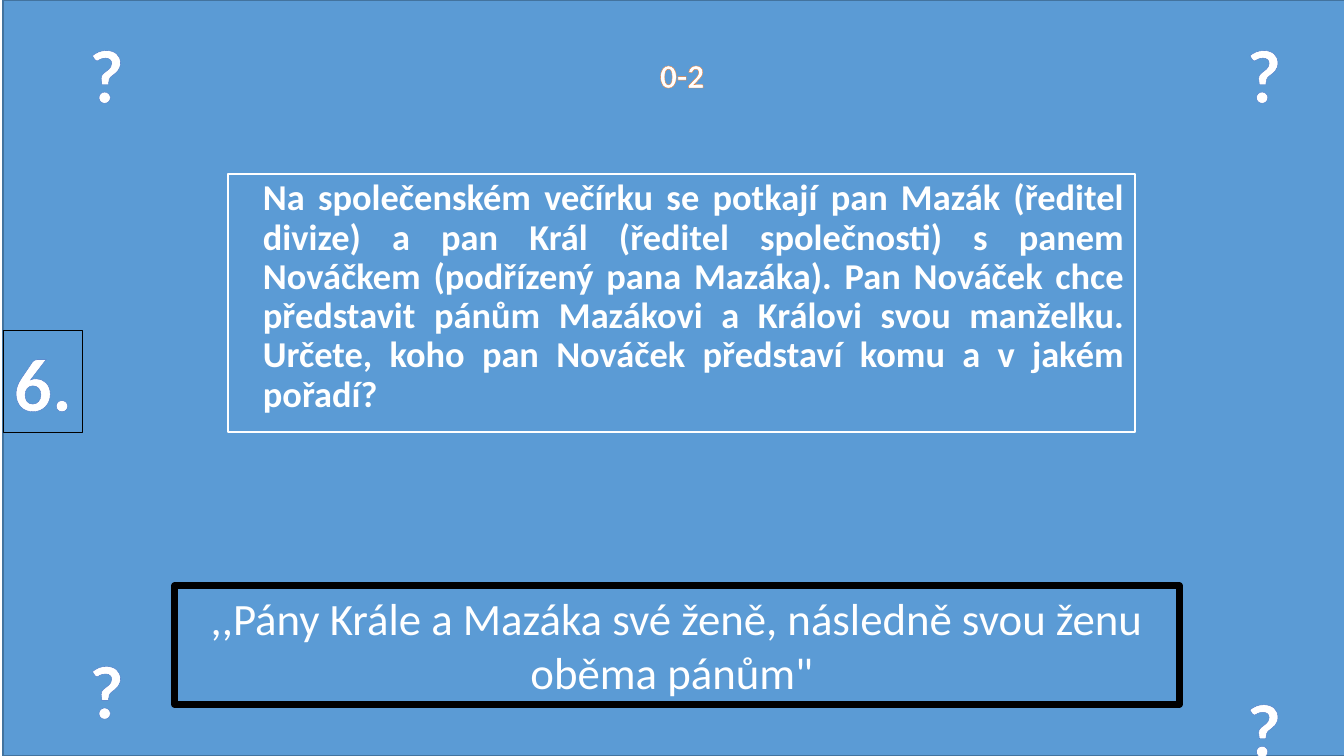
from lxml import etree
from pptx import Presentation
from pptx.dml.color import RGBColor
from pptx.enum.shapes import MSO_SHAPE
from pptx.enum.text import MSO_ANCHOR, MSO_AUTO_SIZE, PP_ALIGN
from pptx.oxml.ns import qn
from pptx.util import Inches, Pt

RECTANGLE = MSO_SHAPE.RECTANGLE
TOP, MIDDLE = MSO_ANCHOR.TOP, MSO_ANCHOR.MIDDLE
CENTER, JUSTIFY = PP_ALIGN.CENTER, PP_ALIGN.JUSTIFY
GROW = MSO_AUTO_SIZE.SHAPE_TO_FIT_TEXT

# Content
NUMBER = "6."
SCORE = "0-2"
MARK = "?"
QUESTION = (
    "Na společenském večírku se potkají pan Mazák (ředitel divize) a pan Král "
    "(ředitel společnosti) s panem Nováčkem (podřízený pana Mazáka). Pan Nováček "
    "chce představit pánům Mazákovi a Královi svou manželku. Určete, koho pan "
    "Nováček představí komu a v jakém pořadí?"
)
ANSWER = ',,Pány Krále a Mazáka své ženě, následně svou ženu oběma pánům" '

# Style and layout, in inches
FONT = "Calibri"
BLUE, DARK_BLUE, WHITE, BLACK = "5B9BD5", "43739E", "FFFFFF", "000000"
BIG_OUTLINE, SCORE_OUTLINE = ("4472C4", 0.8), ("ED7D31", 0.52)
SLIDE_W, SLIDE_H = 13.33, 7.5
EDGE = 0.03
BIG_H = 1.01
MARK_W = 0.55
MARK_LEFT, MARK_RIGHT, MARK_TOP = 0.78, 12.26, 0.22
MARK_CORNERS = [(MARK_LEFT, MARK_TOP), (MARK_RIGHT, MARK_TOP),
                (MARK_LEFT, 6.33), (MARK_RIGHT, 6.71)]


def rgb(color):
    return RGBColor.from_string(color)


def outline_text(run, color, width):
    properties = run.font._element if hasattr(run.font, "_element") else run._r.get_or_add_rPr()
    line = etree.Element(qn("a:ln"), w=str(Pt(width)))
    fill = etree.SubElement(line, qn("a:solidFill"))
    etree.SubElement(fill, qn("a:srgbClr"), val=color)
    properties.insert(0, line)


def write(holder, text, size, bold=True, outline=None, align=CENTER,
          anchor=MIDDLE, wrap=False, grow=True):
    frame = holder.text_frame
    frame.word_wrap = wrap
    frame.vertical_anchor = anchor
    if grow:
        frame.auto_size = GROW
    paragraph = frame.paragraphs[0]
    paragraph.alignment = align
    font = paragraph.font
    font.name, font.size, font.bold = FONT, Pt(size), bold
    font.color.rgb = rgb(WHITE)
    run = paragraph.add_run()
    run.text = text
    if outline:
        outline_text(run, *outline)
    return paragraph


def add_box(box, line, width, fill=None):
    shape = slide.shapes.add_shape(RECTANGLE, *map(Inches, box))
    shape.shadow.inherit = False
    if fill:
        shape.fill.solid()
        shape.fill.fore_color.rgb = rgb(fill)
    else:
        shape.fill.background()
    shape.line.color.rgb = rgb(line)
    shape.line.width = Pt(width)
    return shape


def add_label(box, text, size, outline):
    label = slide.shapes.add_textbox(*map(Inches, box))
    write(label, text, size, outline=outline, anchor=TOP)


presentation = Presentation()
presentation.slide_width, presentation.slide_height = Inches(SLIDE_W), Inches(SLIDE_H)
slide = presentation.slides.add_slide(presentation.slide_layouts[6])

# Backdrop with a question mark in each corner
add_box((EDGE, 0, SLIDE_W, SLIDE_H), DARK_BLUE, 1, BLUE)
for left, top in MARK_CORNERS:
    add_label((left, top, MARK_W, BIG_H), MARK, 54, BIG_OUTLINE)

# Question number
number = add_box((EDGE, 3.28, 0.79, BIG_H), BLACK, 0.75)
write(number, NUMBER, 54, outline=BIG_OUTLINE, anchor=TOP)

# Answer
answer = add_box((1.73, 5.81, 9.97, 1.18), BLACK, 4.5)
write(answer, ANSWER, 32, bold=False, anchor=TOP, wrap=True)

# Score
add_label((6.44, 0.49, 0.65, 0.5), SCORE, 24, SCORE_OUTLINE)

# Question
question = add_box((2.26, 1.73, 9, 2.56), WHITE, 1.5, BLUE)
paragraph = write(question, QUESTION, 26, align=JUSTIFY, anchor=TOP, wrap=True, grow=False)
paragraph.line_spacing = 0.9
paragraph.space_before = Pt(10)
paragraph._p.get_or_add_pPr().set("marL", str(Inches(0.25)))

presentation.save("out.pptx")
